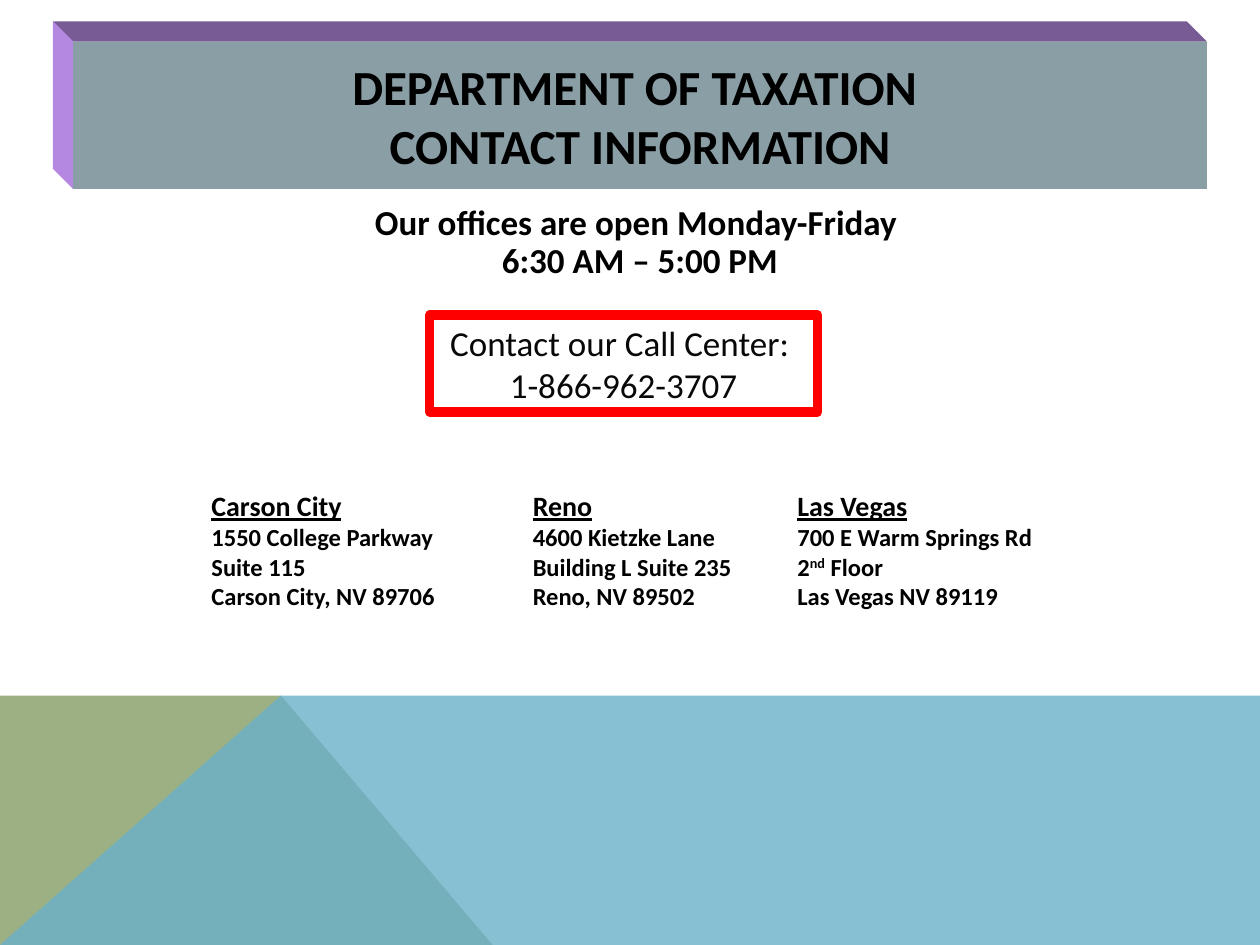
from lxml import etree
from pptx import Presentation
from pptx.dml.color import RGBColor
from pptx.enum.shapes import MSO_SHAPE as SHAPE
from pptx.enum.text import MSO_ANCHOR as ANCHOR, PP_ALIGN as ALIGN
from pptx.oxml.ns import qn
from pptx.util import Inches, Pt

COLORS = {
    "black": "000000", "ink": "080808", "white": "FFFFFF", "red": "FF0000",
    "olive": "9CB084", "blue": "6BB1C9",
    "panel": "8A9EA5", "panel_top": "785A94", "panel_side": "B487E0",
}


class SlideBuilder:
    """Holds the style and the current slide."""
    font = "Calibri"

    def __init__(self, prs):
        self.slide = prs.slides.add_slide(prs.slide_layouts[6])

    def color(self, name):
        return RGBColor.from_string(COLORS[name])

    def paint(self, sp, fill, line=None, width=0):
        sp.shadow.inherit = False
        sp.fill.solid()
        sp.fill.fore_color.rgb = self.color(fill)
        if line:
            sp.line.color.rgb = self.color(line)
            sp.line.width = Pt(width)
        else:
            sp.line.fill.background()

    def polygon(self, points, fill, alpha=None):
        pts = [(Inches(x), Inches(y)) for x, y in points]
        fb = self.slide.shapes.build_freeform(*pts[0])
        fb.add_line_segments(pts[1:], close=True)
        sp = fb.convert_to_shape()
        self.paint(sp, fill)
        if alpha:
            clr = sp._element.spPr.find(qn("a:solidFill"))[0]
            etree.SubElement(clr, qn("a:alpha"), val=str(alpha * 1000))

    def box(self, at, fill, line=None, width=0):
        sp = self.slide.shapes.add_shape(SHAPE.RECTANGLE, *map(Inches, at))
        self.paint(sp, fill, line, width)
        return sp

    def text_box(self, at):
        return self.slide.shapes.add_textbox(*map(Inches, at))

    def put_text(self, sp, lines, anchor=ANCHOR.TOP, wrap=True, align=ALIGN.CENTER,
                 spacing=1.0, tabs=(), color="black", **style):
        """Each line is a list of (text, extra font values) runs."""
        tf = sp.text_frame
        tf.word_wrap, tf.vertical_anchor = wrap, anchor
        for i, runs in enumerate(lines):
            p = tf.paragraphs[0] if i == 0 else tf.add_paragraph()
            p.alignment, p.line_spacing = align, spacing
            if tabs:
                tab_list = etree.SubElement(p._p.get_or_add_pPr(), qn("a:tabLst"))
                for pos in tabs:
                    etree.SubElement(tab_list, qn("a:tab"), pos=str(Inches(pos)), algn="l")
            for text, extra in runs:
                r = p.add_run()
                r.text = text
                values = {"name": self.font, **style, **extra}
                raised = values.pop("raised", None)
                for key, value in values.items():
                    setattr(r.font, key, value)
                r.font.color.rgb = self.color(color)
                if raised:
                    r._r.get_or_add_rPr().set("baseline", str(raised * 1000))


def plain(*lines):
    return [[(line, {})] for line in lines]


def main():
    prs = Presentation()
    prs.slide_width, prs.slide_height = Inches(10), Inches(7.5)
    s = SlideBuilder(prs)

    # Footer artwork
    s.polygon([(0, 7.5), (0, 5.52), (2.23, 5.52), (3.91, 7.5)], "olive")
    s.polygon([(0, 7.5), (2.23, 5.52), (10, 5.52), (10, 7.5)], "blue", alpha=80)

    # Opening hours
    s.put_text(s.text_box((0.58, 1.58, 9, 1)),
               plain("Our offices are open Monday-Friday ", "6:30 AM – 5:00 PM"),
               spacing=0.9, size=Pt(20), bold=True)

    # Office addresses, in columns set by tab stops
    head, body = {"size": Pt(16), "underline": True}, {"size": Pt(14)}
    gap = ("\t", body)
    s.put_text(s.text_box((1.58, 3.83, 7.08, 1.08)), [
        [("Carson City", head), gap, ("Reno", head), gap, ("Las Vegas", head)],
        [("1550 College Parkway\t4600 Kietzke Lane\t700 E Warm Springs Rd", body)],
        [("Suite 115\tBuilding L Suite 235\t2", body),
         ("nd", {**body, "raised": 30}), (" Floor", body)],
        [("Carson City, NV 89706\tReno, NV 89502\tLas Vegas NV 89119", body)],
    ], align=ALIGN.LEFT, tabs=(2.55, 4.65), bold=True)

    # Call center box
    call = s.box((3.41, 2.5, 3.08, 0.77), "white", "red", 5.25)
    s.put_text(call, plain("Contact our Call Center: ", "1-866-962-3707"),
               anchor=ANCHOR.MIDDLE, wrap=False, color="ink", size=Pt(20))

    # Title panel with its raised top and left faces
    x, y, w, h, depth = 0.58, 0.33, 9, 1.17, 0.16
    s.polygon([(x, y), (x - depth, y - depth),
               (x + w - depth, y - depth), (x + w, y)], "panel_top")
    s.polygon([(x, y), (x - depth, y - depth),
               (x - depth, y + h - depth), (x, y + h)], "panel_side")
    s.put_text(s.box((x, y, w, h), "panel"),
               plain("DEPARTMENT OF TAXATION ", "CONTACT INFORMATION"),
               anchor=ANCHOR.MIDDLE, size=Pt(28), bold=True)

    prs.save("out.pptx")


if __name__ == "__main__":
    main()
